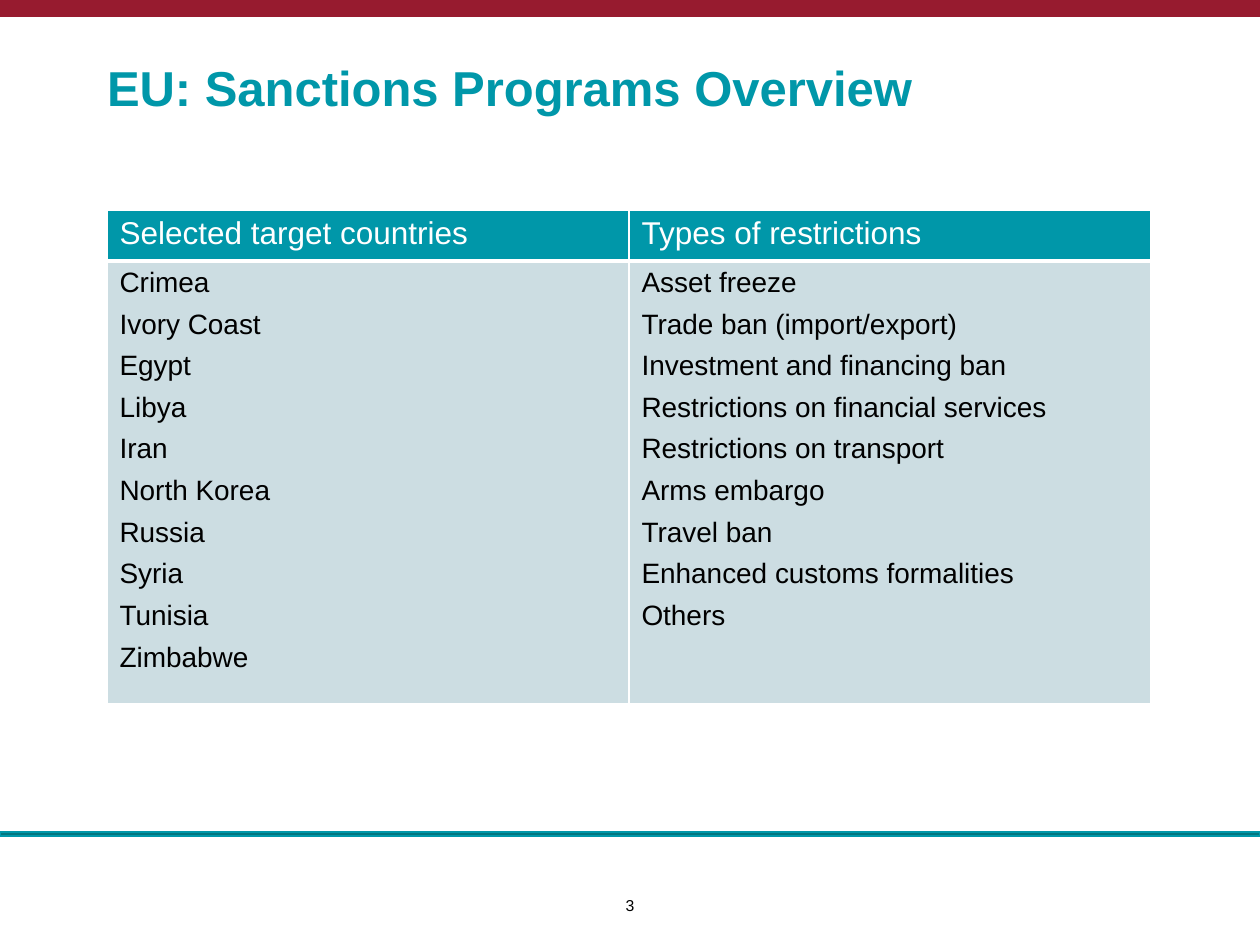
from dataclasses import dataclass

from lxml import etree
from pptx import Presentation
from pptx import util as u
from pptx.dml.color import RGBColor
from pptx.enum import shapes, text
from pptx.oxml.ns import qn

PX_PER_INCH = 126
FONT = "Arial"
TEAL, DARK_TEAL, CRIMSON = "0097A9", "007680", "971B2F"
PALE, WHITE, BLACK = "CCDDE2", "FFFFFF", "000000"


@dataclass(frozen=True)
class Box:
    left: int
    top: int
    width: int
    height: int

    def emu(self) -> list[u.Emu]:
        return [px(n) for n in (self.left, self.top, self.width, self.height)]


@dataclass(frozen=True)
class Style:
    size: int
    color: str
    bold: bool = False


@dataclass(frozen=True)
class Column:
    heading: str
    entries: tuple[str, ...]


COLUMNS = (
    Column("Selected target countries", (
        "Crimea", "Ivory Coast", "Egypt", "Libya", "Iran",
        "North Korea", "Russia", "Syria", "Tunisia", "Zimbabwe")),
    Column("Types of restrictions", (
        "Asset freeze", "Trade ban (import/export)",
        "Investment and financing ban", "Restrictions on financial services",
        "Restrictions on transport", "Arms embargo", "Travel ban",
        "Enhanced customs formalities", "Others")),
)


def px(length: int) -> u.Emu:
    return u.Emu(round(length * u.Inches(1) / PX_PER_INCH))


def rgb(color: str) -> RGBColor:
    return RGBColor.from_string(color)


def style_paragraph(paragraph, style: Style) -> None:
    for run in paragraph.runs:
        run.font.name = FONT
        run.font.size = u.Pt(style.size)
        run.font.bold = style.bold
        run.font.color.rgb = rgb(style.color)


def add_bar(slide, box: Box, fill: str, outline: str | None = None) -> None:
    bar = slide.shapes.add_shape(shapes.MSO_SHAPE.RECTANGLE, *box.emu())
    bar.shadow.inherit = False
    bar.fill.solid()
    bar.fill.fore_color.rgb = rgb(fill)
    if outline:
        bar.line.color.rgb = rgb(outline)
        bar.line.width = u.Pt(0.75)
    else:
        bar.line.fill.background()


def add_label(slide, box: Box, words: str, style: Style, anchor, align) -> None:
    frame = slide.shapes.add_textbox(*box.emu()).text_frame
    frame.margin_left = frame.margin_right = 0
    frame.margin_top = frame.margin_bottom = 0
    frame.word_wrap = True
    frame.vertical_anchor = anchor
    frame.text = words
    frame.paragraphs[0].alignment = align
    style_paragraph(frame.paragraphs[0], style)


def add_borders(cell, top: int, bottom: int) -> None:
    properties = cell._tc.get_or_add_tcPr()
    for side, width in (("L", 1), ("R", 1), ("T", top), ("B", bottom)):
        border = etree.SubElement(properties, qn(f"a:ln{side}"), w=str(u.Pt(width)))
        fill = etree.SubElement(border, qn("a:solidFill"))
        etree.SubElement(fill, qn("a:srgbClr"), val=WHITE)


def fill_cell(cell, lines: tuple[str, ...], style: Style, fill: str) -> None:
    cell.fill.solid()
    cell.fill.fore_color.rgb = rgb(fill)
    cell.text = "\n".join(lines)
    for paragraph in cell.text_frame.paragraphs:
        paragraph.space_after = u.Pt(6)
        style_paragraph(paragraph, style)


def add_sanctions_table(slide, box: Box, heading_height: int) -> None:
    table = slide.shapes.add_table(2, len(COLUMNS), *box.emu()).table
    table.horz_banding = False
    table.rows[0].height = px(heading_height)
    table.rows[1].height = px(box.height - heading_height)
    for index, column in enumerate(COLUMNS):
        table.columns[index].width = px(box.width // len(COLUMNS))
        heading, body = table.cell(0, index), table.cell(1, index)
        add_borders(heading, top=1, bottom=3)
        add_borders(body, top=3, bottom=1)
        fill_cell(heading, (column.heading,), Style(18, WHITE), TEAL)
        fill_cell(body, column.entries, Style(16, BLACK), PALE)


def main() -> None:
    deck = Presentation()
    deck.slide_width, deck.slide_height = px(1260), px(945)
    slide = deck.slides.add_slide(deck.slide_layouts[6])
    add_bar(slide, Box(0, 0, 1260, 17), CRIMSON)
    add_bar(slide, Box(0, 832, 1260, 4), DARK_TEAL, TEAL)
    add_label(slide, Box(107, 39, 1089, 77), "EU: Sanctions Programs Overview",
              Style(28, TEAL, bold=True), text.MSO_ANCHOR.BOTTOM, text.PP_ALIGN.LEFT)
    add_label(slide, Box(578, 896, 104, 33), "3", Style(9, BLACK),
              text.MSO_ANCHOR.TOP, text.PP_ALIGN.CENTER)
    add_sanctions_table(slide, Box(107, 210, 1044, 469), heading_height=51)
    deck.save("out.pptx")


if __name__ == "__main__":
    main()
